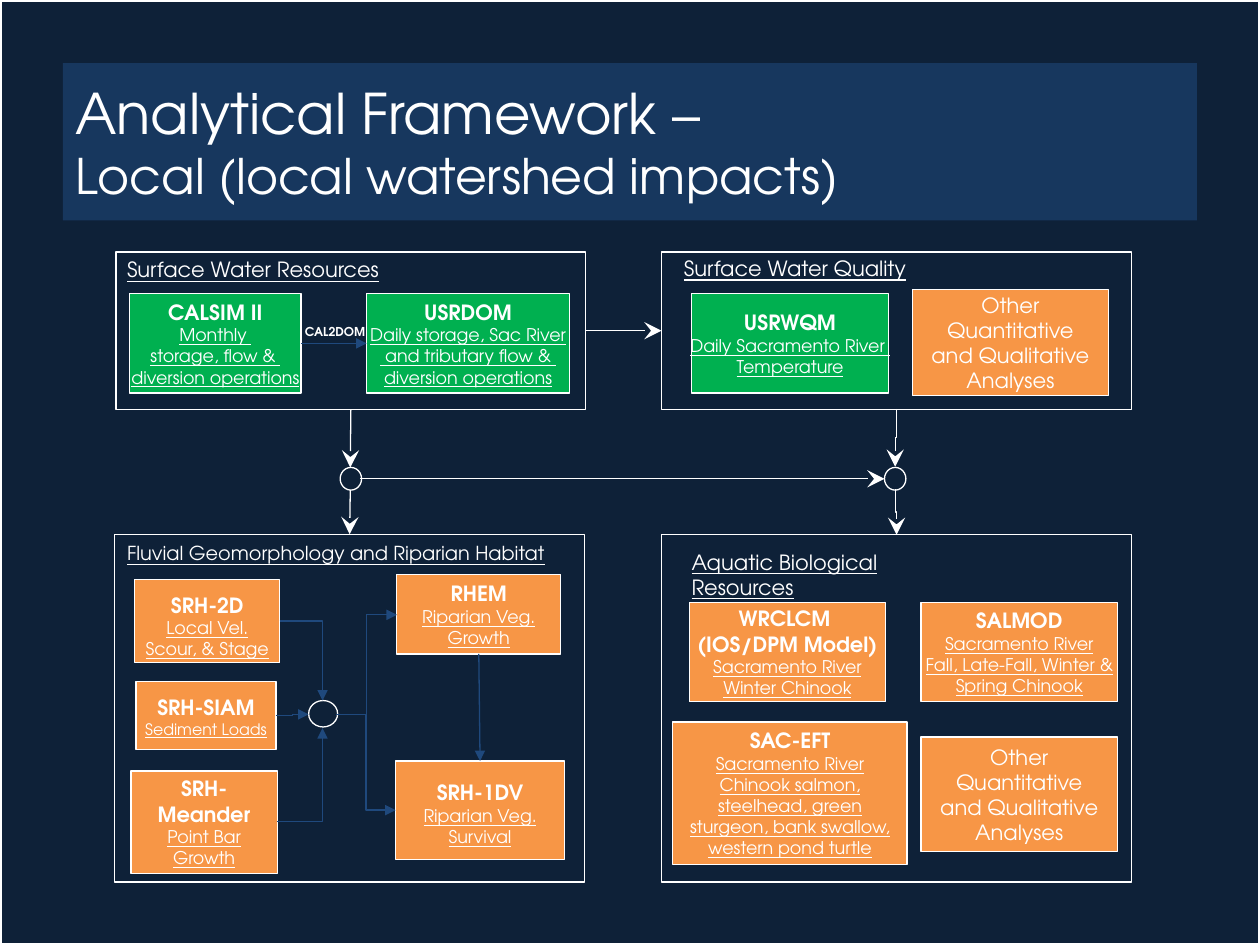
"""Build the local analytical framework slide with its model flow diagram."""
from lxml.etree import SubElement
from pptx import Presentation
from pptx.dml.color import RGBColor
from pptx.enum.shapes import MSO_CONNECTOR, MSO_SHAPE
from pptx.enum.text import MSO_ANCHOR, MSO_AUTO_SIZE, PP_ALIGN
from pptx.oxml.ns import qn
from pptx.util import Inches, Pt

COLORS = {
    "navy": "0E2138", "title": "17375E", "white": "FFFFFF",
    "green": "00B050", "orange": "F79646", "blue": "1F497D",
}
FONT = "TeX Gyre Adventor"


def write(box, text, size=12, bold=False, underline=False, align=PP_ALIGN.CENTER):
    frame = box.text_frame
    for line in text.split("\n"):
        para = frame.add_paragraph() if frame.text else frame.paragraphs[0]
        para.alignment = align
        span = para.add_run()
        span.text = line
        span.font.name = FONT
        span.font.size = Pt(size)
        span.font.bold = bold
        span.font.underline = underline
        span.font.color.rgb = RGBColor.from_string(COLORS["white"])


def draw(kind, place, fill=None, line_width=0.75):
    box = page.shapes.add_shape(kind, *map(Inches, place))
    box.shadow.inherit = False
    if fill:
        box.fill.solid()
        box.fill.fore_color.rgb = RGBColor.from_string(COLORS[fill])
    else:
        box.fill.background()
    if line_width:
        box.line.color.rgb = RGBColor.from_string(COLORS["white"])
        box.line.width = Pt(line_width)
    else:
        box.line.fill.background()
    return box


deck = Presentation()
deck.slide_width = Inches(10)
deck.slide_height = Inches(7.5)
page = deck.slides.add_slide(deck.slide_layouts[6])
page.background.fill.solid()
page.background.fill.fore_color.rgb = RGBColor.from_string(COLORS["navy"])

draw(MSO_SHAPE.RECTANGLE, (0, 0, 10, 7.5), line_width=2.25)
title = draw(MSO_SHAPE.RECTANGLE, (0.5, 0.5, 9, 1.25), "title", line_width=0)
write(title, "Analytical Framework –", size=32, align=PP_ALIGN.LEFT)
write(title, "Local (local watershed impacts)", size=28, align=PP_ALIGN.LEFT)

shapes = {}
panels = {
    "water": (0.92, 2, 1.25), "quality": (5.25, 2, 1.25),
    "habitat": (0.91, 4.24, 2.76), "aquatic": (5.25, 4.24, 2.76),
}
for name, (left, top, height) in panels.items():
    shapes[name] = draw(MSO_SHAPE.RECTANGLE, (left, top, 3.73, height))

labels = [
    ("Surface Water Resources", (0.91, 1.99, 3.58, 0.3), 12),
    ("Surface Water Quality", (5.33, 1.98, 3.58, 0.3), 12),
    ("Fluvial Geomorphology and Riparian Habitat", (0.91, 4.25, 3.59, 0.29), 11),
    ("Aquatic Biological Resources", (5.39, 4.31, 2.43, 0.51), 12),
]
for text, place, size in labels:
    label = page.shapes.add_textbox(*map(Inches, place))
    label.text_frame.word_wrap = True
    label.text_frame.auto_size = MSO_AUTO_SIZE.SHAPE_TO_FIT_TEXT
    write(label, text, size=size, underline=True, align=PP_ALIGN.LEFT)

models = [
    ("CALSIM II", "Monthly \nstorage, flow & \ndiversion operations",
     (1.03, 2.33, 1.36, 0.79), "green", False),
    ("USRDOM", "Daily storage, Sac River\n and tributary flow & \ndiversion operations",
     (2.91, 2.33, 1.61, 0.79), "green", False),
    ("USRWQM", "Daily Sacramento River \nTemperature",
     (5.49, 2.33, 1.56, 0.79), "green", False),
    ("WRCLCM \n(IOS/DPM Model)", "Sacramento River\nWinter Chinook",
     (5.47, 4.78, 1.56, 0.79), "orange", False),
    ("SALMOD", "Sacramento River\nFall, Late-Fall, Winter &\nSpring Chinook",
     (7.31, 4.78, 1.56, 0.79), "orange", False),
    ("SAC-EFT", "Sacramento River\nChinook salmon, steelhead, green sturgeon, "
     "bank swallow, western pond turtle", (5.34, 5.73, 1.86, 1.13), "orange", True),
]
for name, detail, place, fill, wrap in models:
    shapes[name] = box = draw(MSO_SHAPE.RECTANGLE, place, fill)
    box.text_frame.word_wrap = wrap
    write(box, name, bold=True)
    write(box, detail, size=10, underline=True)

for place in [(7.24, 2.3, 1.56, 0.84), (7.31, 5.85, 1.56, 0.91)]:
    box = draw(MSO_SHAPE.RECTANGLE, place, "orange")
    write(box, "Other Quantitative and Qualitative Analyses")

habitat_models = [
    ("SRH-2D", "Local Vel. Scour, & Stage", (1.07, 4.6, 1.15, 0.66), 10, 0.1, MSO_ANCHOR.TOP),
    ("SRH-SIAM", "Sediment Loads", (1.08, 5.41, 1.11, 0.54), 9, 0.1, MSO_ANCHOR.TOP),
    ("SRH-Meander", "Point Bar Growth", (1.04, 6.12, 1.16, 0.81), 10, 0.05, MSO_ANCHOR.MIDDLE),
    ("RHEM", "Riparian Veg. Growth", (3.15, 4.56, 1.3, 0.63), 10, 0.05, MSO_ANCHOR.TOP),
    ("SRH-1DV", "Riparian Veg. Survival", (3.14, 6.04, 1.34, 0.78), 10, 0.15, MSO_ANCHOR.TOP),
]
for name, detail, place, size, inset, anchor in habitat_models:
    shapes[name] = box = draw(MSO_SHAPE.FLOWCHART_PROCESS, place, "orange")
    frame = box.text_frame
    frame.vertical_anchor = anchor
    frame.margin_left = frame.margin_right = Inches(0.05)
    frame.margin_top = frame.margin_bottom = Inches(inset)
    write(box, name, bold=True)
    write(box, detail, size=size, underline=True)

link_label = page.shapes.add_textbox(*map(Inches, (2.42, 2.57, 0.48, 0.12)))
frame = link_label.text_frame
frame.margin_left = frame.margin_right = frame.margin_top = frame.margin_bottom = 0
frame.word_wrap = False
frame.auto_size = MSO_AUTO_SIZE.SHAPE_TO_FIT_TEXT
write(link_label, "CAL2DOM", size=7, bold=True, align=PP_ALIGN.LEFT)

for place in [(2.45, 5.56, 0.23, 0.21), (2.7, 3.71, 0.17, 0.18), (7.02, 3.71, 0.17, 0.18)]:
    draw(MSO_SHAPE.FLOWCHART_CONNECTOR, place)

straight_arrows = [
    ((4.65, 2.62, 5.25, 2.62), "white", ("water", 3), ("quality", 1)),
    ((2.39, 2.72, 2.91, 2.72), "blue", ("CALSIM II", 3), ("USRDOM", 1)),
    ((3.81, 5.19, 3.81, 6.04), "blue", ("RHEM", 2), ("SRH-1DV", 0)),
    ((2.78, 3.25, 2.78, 3.71), "white", ("water", 2), None),
    ((2.78, 3.89, 2.77, 4.24), "white", None, ("habitat", 0)),
    ((2.86, 3.8, 7.02, 3.8), "white", None, None),
]
bent_arrows = [
    ((2.22, 4.93, 2.56, 5.56), "blue", "bentConnector2", 0),
    ((2.19, 5.68, 2.45, 5.67), "blue", "bentConnector3", 0),
    ((2.2, 6.52, 2.56, 5.78), "blue", "bentConnector2", 0),
    ((2.67, 5.67, 3.15, 4.88), "blue", "bentConnector3", 0),
    ((2.67, 5.67, 3.14, 6.43), "blue", "bentConnector3", 0),
    ((6.88, 3.47, 7.34, 3.48), "white", "bentConnector3", 90),
    ((7.29, 4.06, 6.93, 4.07), "white", "bentConnector3", 270),
]
arrows = []
for ends, color, start, finish in straight_arrows:
    arrow = page.shapes.add_connector(MSO_CONNECTOR.STRAIGHT, *map(Inches, ends))
    if start:
        arrow.begin_connect(shapes[start[0]], start[1])
    if finish:
        arrow.end_connect(shapes[finish[0]], finish[1])
    arrows.append((arrow, color))
for ends, color, preset, angle in bent_arrows:
    arrow = page.shapes.add_connector(MSO_CONNECTOR.ELBOW, *map(Inches, ends))
    properties = arrow._element.spPr
    properties.find(qn("a:prstGeom")).set("prst", preset)
    if angle:
        properties.find(qn("a:xfrm")).set("rot", str(angle * 60000))
    arrows.append((arrow, color))

for arrow, color in arrows:
    arrow.line.color.rgb = RGBColor.from_string(COLORS[color])
    arrow.line.width = Pt(0.75)
    head, size = ("stealth", "lg") if color == "white" else ("triangle", "med")
    SubElement(arrow.line._get_or_add_ln(), qn("a:tailEnd"), type=head, w=size, len=size)
    SubElement(arrow._element.spPr, qn("a:effectLst"))

deck.save("out.pptx")
